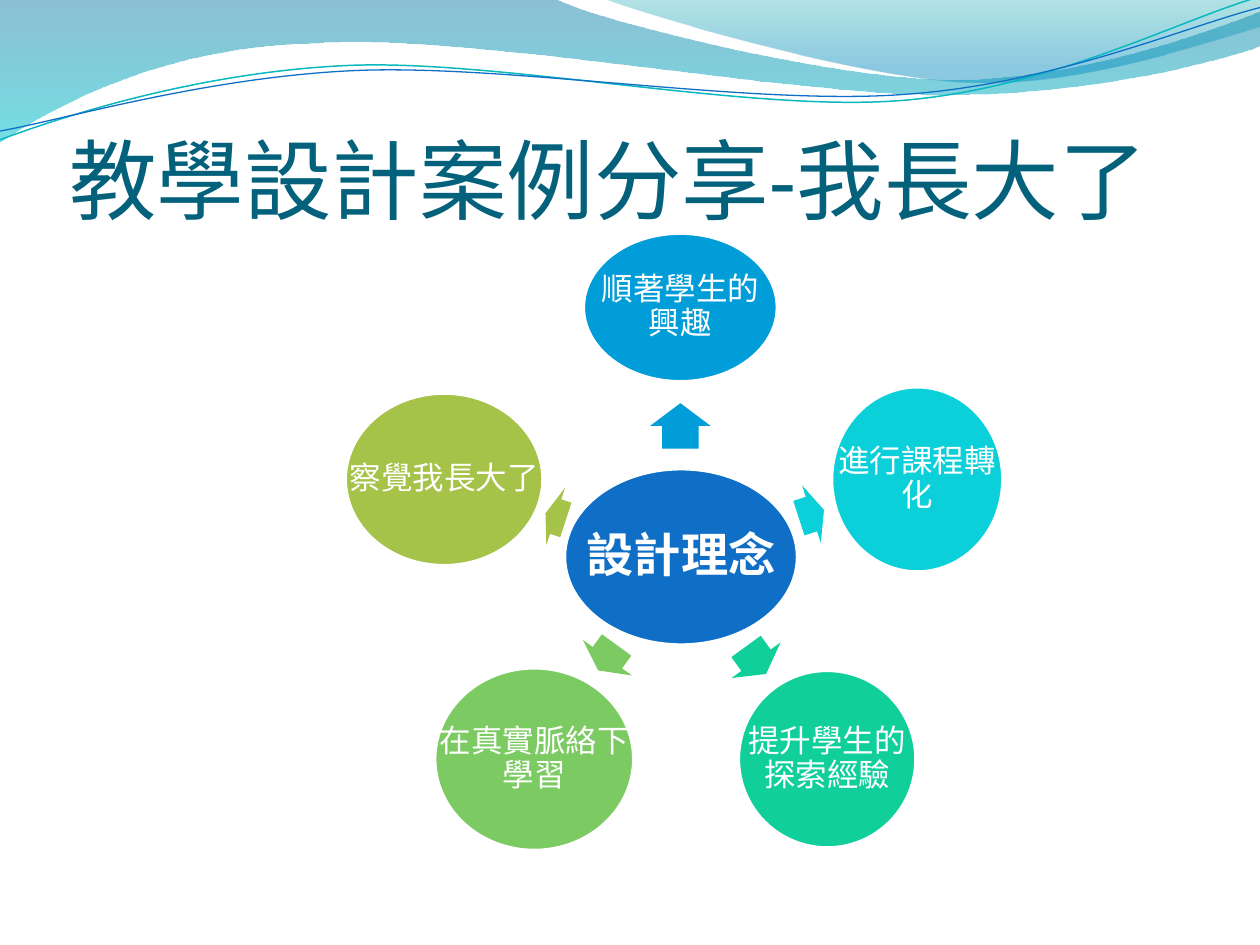
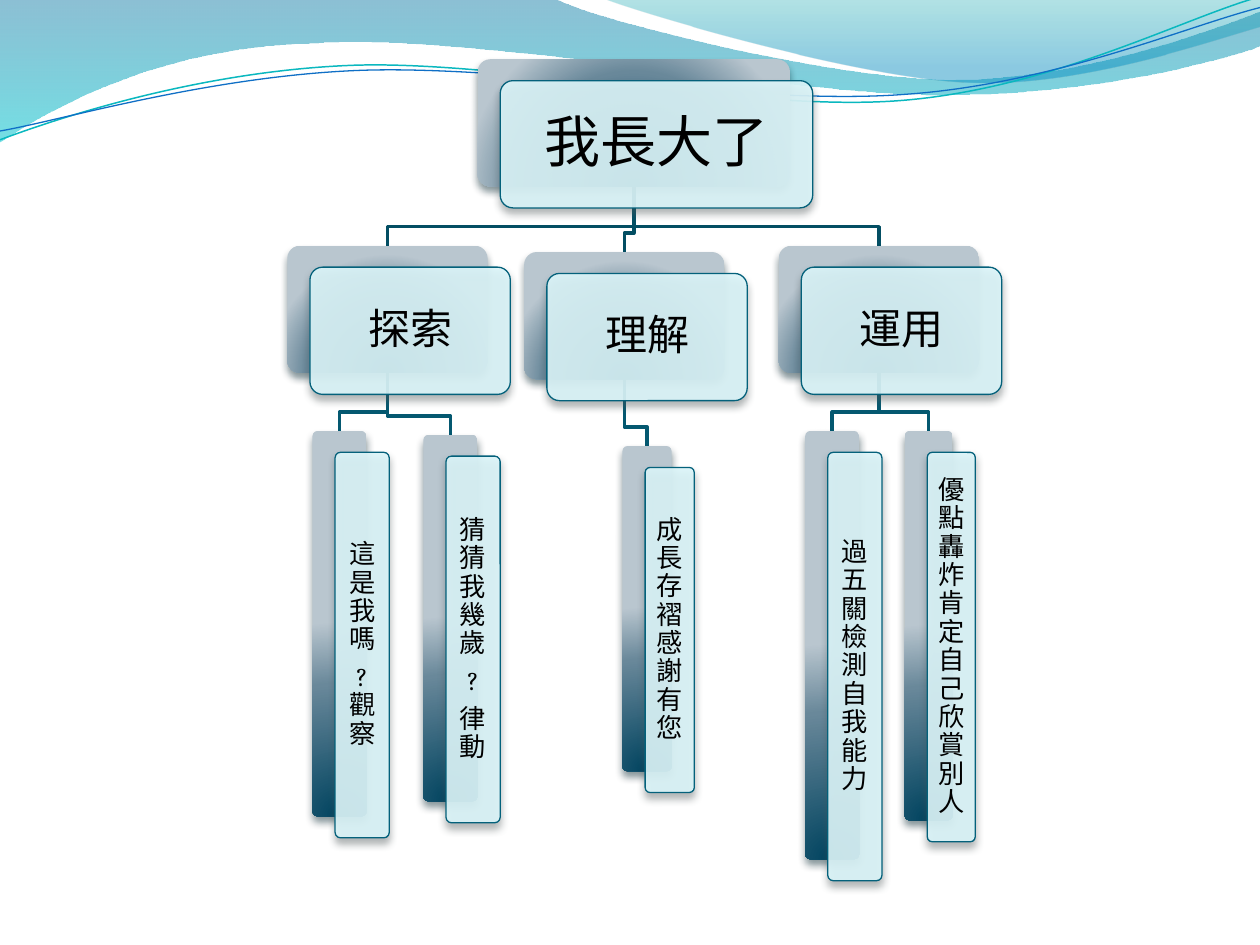
"""Build two slides on a teaching design: a wheel of ideas and a lesson tree."""
from dataclasses import dataclass, field
from typing import NamedTuple

from lxml.etree import Element, SubElement
from pptx import Presentation
from pptx.dml.color import RGBColor
from pptx.enum.shapes import MSO_SHAPE as Shp
from pptx.enum.text import MSO_ANCHOR as Anchor, MSO_AUTO_SIZE as AutoSize, PP_ALIGN as Align
from pptx.oxml import parse_xml
from pptx.oxml.ns import nsdecls, qn
from pptx.shapes.autoshape import Shape
from pptx.slide import Slide
from pptx.util import Inches, Pt

Point = tuple[float, float]
Segment = tuple[float, ...]


class Box(NamedTuple):
    left: float
    top: float
    width: float
    height: float

    def emu(self) -> list[int]:
        return [Inches(v) for v in self]

    def shifted(self, dx: float, dy: float) -> "Box":
        return Box(self.left + dx, self.top + dy, self.width, self.height)


class Stop(NamedTuple):
    pos: int
    color: str
    alpha: int = 100


class TextStyle(NamedTuple):
    size: int
    color: str
    latin: str
    east_asian: str
    inset: float
    bold: bool = False


@dataclass(frozen=True)
class Theme:
    white: str = "FFFFFF"
    hub_fill: str = "0F6FC6"
    card_fill: str = "DBF5F9"
    card_alpha: int = 90
    card_line: str = "04617B"
    card_shadow: str = "4D5658"
    back_shadow: str = "00232C"
    back_stops: tuple[Stop, ...] = (Stop(0, "00435F"), Stop(68, "69889A"), Stop(100, "B9C6CF"))
    links: tuple[str, ...] = ("034E63", "045870")
    link_width: float = 2
    title: TextStyle = TextStyle(50, "04617B", "Calibri", "Calibri", 0)
    hub: TextStyle = TextStyle(27, "FFFFFF", "Cambria", "Calibri", 0.04, True)
    spoke: TextStyle = TextStyle(18, "FFFFFF", "Cambria", "Calibri", 0.03)
    levels: tuple[TextStyle, ...] = (
        TextStyle(32, "000000", "Noto Sans CJK SC", "Noto Sans CJK SC", 0.13),
        TextStyle(24, "000000", "Noto Sans CJK SC", "Noto Sans CJK SC", 0.1),
        TextStyle(15, "000000", "Cambria", "Calibri", 0.06),
    )


T = Theme()


@dataclass(frozen=True)
class Wave:
    start: Point
    segments: tuple[Segment, ...]
    stops: tuple[Stop, ...] = ()
    line: str = ""
    width: float = 0


@dataclass(frozen=True)
class Spoke:
    text: str
    color: str
    box: Box
    arrow_center: Point
    arrow_length: float


@dataclass(frozen=True)
class Node:
    text: str
    box: Box
    children: list["Node"] = field(default_factory=list)


WAVES = [
    Wave((0, 0), (
        (4.4, -0.01),
        (4.76, 0.17, 6.64, 0.63, 7.58, 0.63), (8.53, 0.63, 9.58, 0.26, 10, 0.09),
        (10.01, 0.36),
        (9.83, 0.44, 8.7, 0.76, 7.46, 0.75), (6.22, 0.75, 3.82, 0.28, 2.57, 0.34),
        (1.29, 0.36, 0.46, 0.83, -0.01, 1.13), (0, 0),
    ), (Stop(0, "0074A1", 45), Stop(100, "00C6CF", 55))),
    Wave((4.79, -0.01), (
        (5.09, 0.11, 6.82, 0.62, 7.69, 0.65), (8.56, 0.69, 9.61, 0.32, 10, 0.21),
        (10, 0), (4.79, -0.01),
    ), (Stop(0, "00A1A9", 30), Stop(80, "008BBF", 45))),
    Wave((0, 1.11), (
        (0.48, 0.93, 1.58, 0.57, 2.77, 0.52), (3.95, 0.47, 5.93, 0.89, 7.13, 0.8),
        (8.33, 0.71, 9.38, 0.15, 9.98, -0.02),
    ), line="0AB8BF", width=0.85),
    Wave((0, 1.04), (
        (0.47, 0.96, 1.64, 0.61, 2.83, 0.56), (4.03, 0.51, 5.97, 0.84, 7.17, 0.75),
        (8.36, 0.67, 9.41, 0.21, 10, 0.06),
    ), line="0F6FC6", width=0.75),
]

HUB = Box(4.48, 3.72, 1.85, 1.4)
SPOKES = [
    Spoke("順著學生的興趣", "009DD9", Box(4.63, 1.85, 1.54, 1.18), (5.4, 3.38), 0.36),
    Spoke("進行課程轉化", "0BD0D9", Box(6.6, 3.07, 1.36, 1.47), (6.44, 4.08), 0.21),
    Spoke("提升學生的探索經驗", "10CF9B", Box(5.86, 5.32, 1.41, 1.41), (6, 5.24), 0.27),
    Spoke("在真實脈絡下學習", "7CCA62", Box(3.45, 5.3, 1.58, 1.45), (4.82, 5.22), 0.25),
    Spoke("察覺我長大了", "A5C249", Box(2.74, 3.12, 1.57, 1.37), (4.41, 4.1), 0.17),
]
ARROW_HEIGHT = 0.48

TREE = Node("我長大了", Box(3.79, 0.47, 2.48, 1.01), [
    Node("探索", Box(2.28, 1.95, 1.59, 1.01), [
        Node("這是我嗎\n?觀察", Box(2.48, 3.42, 0.43, 3.06)),
        Node("猜猜我幾歲\n?\n律動", Box(3.36, 3.45, 0.43, 2.91)),
    ]),
    Node("理解", Box(4.16, 2, 1.59, 1.01), [
        Node("成長存褶感謝有您", Box(4.94, 3.54, 0.39, 2.58)),
    ]),
    Node("運用", Box(6.18, 1.95, 1.59, 1.01), [
        Node("過五關檢測自我能力", Box(6.39, 3.42, 0.43, 3.4)),
        Node("優點轟炸肯定自己欣賞別人", Box(7.18, 3.42, 0.38, 3.09)),
    ]),
])
CARD_OFFSET = (0.18, 0.17)
ELBOW_RISE = 0.15


def set_gradient(sp: Shape, stops: tuple[Stop, ...], direction: str) -> None:
    """Fill a shape with a gradient whose direction is given as XML."""
    gs = "".join(
        f'<a:gs pos="{st.pos * 1000}"><a:srgbClr val="{st.color}">'
        f'<a:alpha val="{st.alpha * 1000}"/></a:srgbClr></a:gs>' for st in stops)
    grad = parse_xml(f'<a:gradFill {nsdecls("a")} rotWithShape="1">'
                     f"<a:gsLst>{gs}</a:gsLst>{direction}</a:gradFill>")
    sp.fill.background()
    spPr = sp.element.spPr
    spPr.replace(spPr.find(qn("a:noFill")), grad)


def set_solid(sp: Shape, color: str, alpha: int = 100) -> None:
    """Fill a shape with one colour, transparent if asked."""
    sp.fill.solid()
    sp.fill.fore_color.rgb = RGBColor.from_string(color)
    if alpha < 100:
        clr = sp.element.spPr.find(qn("a:solidFill")).find(qn("a:srgbClr"))
        SubElement(clr, qn("a:alpha"), val=str(alpha * 1000))


def set_line(sp: Shape, color: str = "", width: float = 0) -> None:
    """Outline a shape, or remove its outline when no colour is given."""
    if not color:
        sp.line.fill.background()
        return
    sp.line.color.rgb = RGBColor.from_string(color)
    sp.line.width = Pt(width)


def set_shadow(sp: Shape, color: str) -> None:
    """Give a shape a soft shadow below it."""
    shadow = SubElement(sp.element.spPr.find(qn("a:effectLst")), qn("a:outerShdw"),
                        blurRad=str(Pt(4.5)), dist=str(Pt(3)), dir="5400000", rotWithShape="0")
    clr = SubElement(shadow, qn("a:srgbClr"), val=color)
    SubElement(clr, qn("a:alpha"), val="48000")


def add_preset(s: Slide, kind: Shp, box: Box) -> Shape:
    """Add a preset shape without shadow or outline."""
    sp = s.shapes.add_shape(kind, *box.emu())
    sp.shadow.inherit = False
    set_line(sp)
    return sp


def add_outline(s: Slide, start: Point, segments: tuple[Segment, ...], close: bool = False) -> Shape:
    """Add a freeform of straight (2 numbers) and cubic (6 numbers) segments in inches."""
    builder = s.shapes.build_freeform(Inches(start[0]), Inches(start[1]))
    builder.add_line_segments([(Inches(seg[-2]), Inches(seg[-1])) for seg in segments], close=close)
    sp = builder.convert_to_shape()
    sp.shadow.inherit = False
    sp.fill.background()
    for ln, seg in zip(list(sp.element.iter(qn("a:lnTo"))), segments):
        if len(seg) == 6:
            curve = Element(qn("a:cubicBezTo"))
            for x, y in zip(seg[::2], seg[1::2]):
                SubElement(curve, qn("a:pt"), x=str(Inches(x) - sp.left), y=str(Inches(y) - sp.top))
            ln.getparent().replace(ln, curve)
    return sp


def write(sp: Shape, text: str, style: TextStyle) -> None:
    """Write centred text in a shape and format its runs."""
    tf = sp.text_frame
    tf.text = text
    tf.word_wrap = True
    tf.auto_size = AutoSize.NONE
    tf.vertical_anchor = Anchor.MIDDLE
    tf.margin_left = tf.margin_right = tf.margin_top = tf.margin_bottom = Inches(style.inset)
    for p in tf.paragraphs:
        p.alignment = Align.CENTER
        p.line_spacing = 0.9
        p.space_after = Pt(0.35 * style.size)
        for r in p.runs:
            r.font.size = Pt(style.size)
            r.font.bold = style.bold
            r.font.color.rgb = RGBColor.from_string(style.color)
            r.font.name = style.latin
    for rPr in sp.element.iter(qn("a:rPr")):
        SubElement(rPr, qn("a:ea"), typeface=style.east_asian)


def draw_waves(s: Slide) -> None:
    """Draw the band of waves at the top of a slide."""
    for wave in WAVES:
        sp = add_outline(s, wave.start, wave.segments, close=bool(wave.stops))
        set_line(sp, wave.line, wave.width)
        if wave.stops:
            set_gradient(sp, wave.stops, '<a:lin ang="5400000" scaled="1"/>')


def draw_title(s: Slide, text: str) -> None:
    """Place and format the title placeholder."""
    sp = s.shapes.title
    sp.left, sp.top, sp.width, sp.height = Box(0.55, 0.23, 9.23, 1.6).emu()
    write(sp, text, T.title)
    tf = sp.text_frame
    tf.vertical_anchor = Anchor.BOTTOM
    tf.margin_top = Inches(0.05)
    p = tf.paragraphs[0]
    p.alignment = Align.LEFT
    p.line_spacing = 1.0
    p.space_after = Pt(0)


def draw_disc(s: Slide, box: Box, color: str, text: str, style: TextStyle) -> None:
    """Draw an ellipse with a label as wide as the ellipse."""
    sp = add_preset(s, Shp.OVAL, box)
    set_solid(sp, color)
    set_line(sp, T.white, 2)
    write(s.shapes.add_textbox(*box.emu()), text, style)


def draw_wheel(s: Slide) -> None:
    """Draw the hub, with arrows and discs around it."""
    draw_disc(s, HUB, T.hub_fill, "設計理念", T.hub)
    for i, spoke in enumerate(SPOKES):
        x, y = spoke.arrow_center
        length = spoke.arrow_length
        arrow = add_preset(s, Shp.RIGHT_ARROW,
                           Box(x - length / 2, y - ARROW_HEIGHT / 2, length, ARROW_HEIGHT))
        arrow.adjustments[0], arrow.adjustments[1] = 0.6, 0.5
        arrow.rotation = (270 + i * 360 / len(SPOKES)) % 360
        set_solid(arrow, spoke.color)
        draw_disc(s, spoke.box, spoke.color, spoke.text, T.spoke)


def draw_links(s: Slide, node: Node, level: int = 0) -> None:
    """Draw elbow lines from a node to all nodes below it."""
    x0, y0 = node.box.left + node.box.width / 2, node.box.top + node.box.height
    for child in node.children:
        x1, y1 = child.box.left + child.box.width / 2, child.box.top
        bend = y1 - ELBOW_RISE
        link = add_outline(s, (x0, y0), ((x0, bend), (x1, bend), (x1, y1)))
        set_line(link, T.links[level], T.link_width)
        draw_links(s, child, level + 1)


def draw_cards(s: Slide, node: Node, level: int = 0) -> None:
    """Draw a node as a card on a dark plate, then its children."""
    back = add_preset(s, Shp.ROUNDED_RECTANGLE, node.box)
    set_gradient(back, T.back_stops, '<a:path path="circle"><a:fillToRect l="50000" t="130000" '
                                     'r="50000" b="-30000"/></a:path>')
    set_shadow(back, T.back_shadow)
    card = add_preset(s, Shp.ROUNDED_RECTANGLE, node.box.shifted(*CARD_OFFSET))
    set_solid(card, T.card_fill, T.card_alpha)
    set_line(card, T.card_line, 0.75)
    set_shadow(card, T.card_shadow)
    back.adjustments[0] = card.adjustments[0] = 0.1
    write(card, node.text, T.levels[level])
    for child in node.children:
        draw_cards(s, child, level + 1)


def main() -> None:
    """Build and save the slides."""
    prs = Presentation()
    prs.slide_width, prs.slide_height = Inches(10), Inches(7.5)
    wheel = prs.slides.add_slide(prs.slide_layouts[5])
    draw_waves(wheel)
    draw_title(wheel, "教學設計案例分享-我長大了")
    draw_wheel(wheel)
    tree = prs.slides.add_slide(prs.slide_layouts[6])
    draw_waves(tree)
    draw_links(tree, TREE)
    draw_cards(tree, TREE)
    prs.save("out.pptx")


if __name__ == "__main__":
    main()
